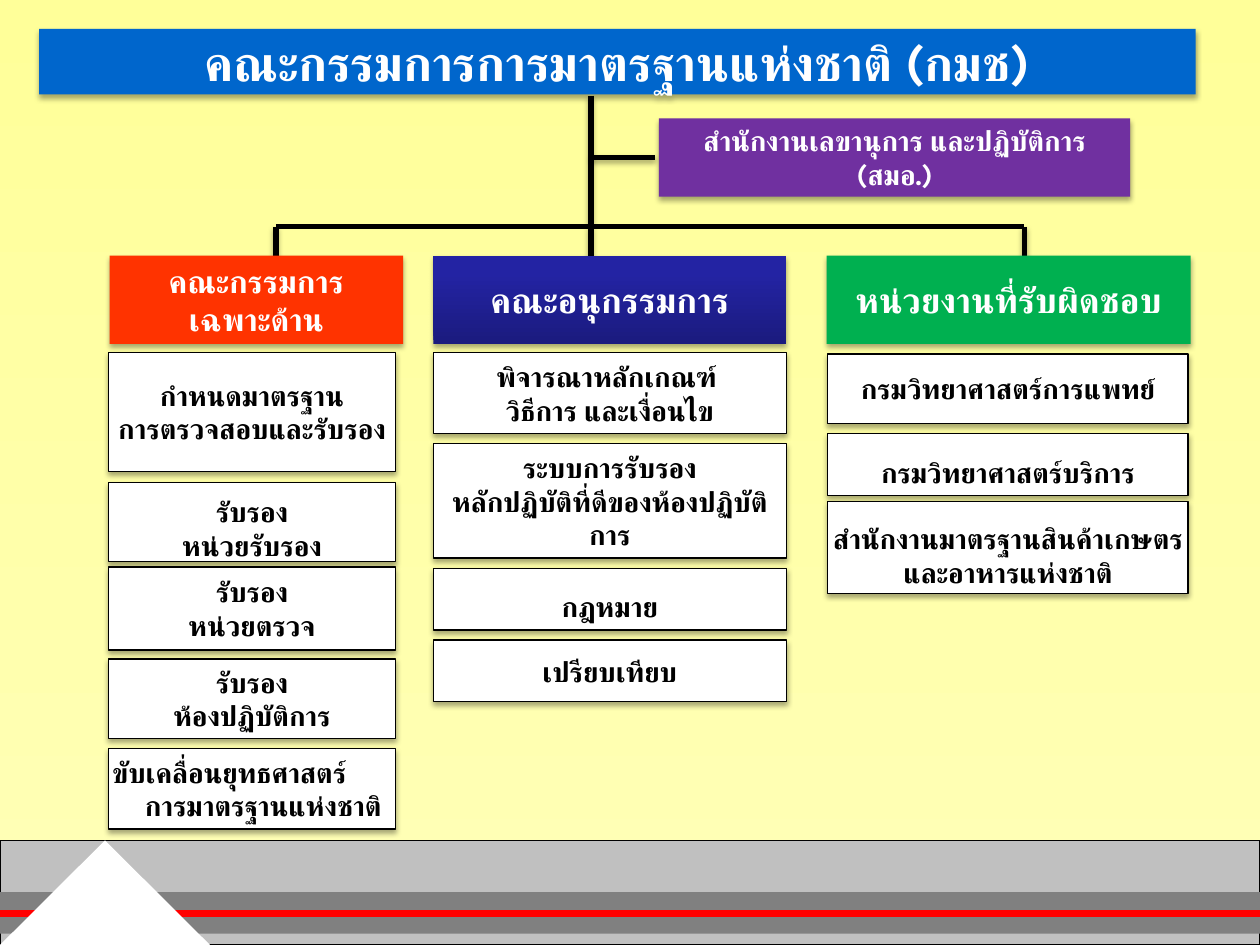
from lxml import etree
from pptx import Presentation
from pptx.dml.color import RGBColor
from pptx.enum.shapes import MSO_CONNECTOR, MSO_SHAPE
from pptx.enum.text import MSO_ANCHOR, PP_ALIGN
from pptx.oxml.ns import qn
from pptx.util import Inches, Pt

RECTANGLE, TRIANGLE = MSO_SHAPE.RECTANGLE, MSO_SHAPE.ISOSCELES_TRIANGLE
STRAIGHT = MSO_CONNECTOR.STRAIGHT
MIDDLE = MSO_ANCHOR.MIDDLE
CENTER, LEFT = PP_ALIGN.CENTER, PP_ALIGN.LEFT
BODY_FONT, HEADING_FONT = "Karla", "Roboto"
BLACK, WHITE = "000000", "FFFFFF"
WIDTH, HEIGHT = 10, 7.5
BAND_TOP = 6.67
HEAD_TOP, HEAD_HEIGHT = 2.03, 0.7
BRANCH_Y, TRUNK_X = 1.8, 4.69

# Content
TITLE = ["คณะกรรมการการมาตรฐานแห่งชาติ (กมช)"]
SECRETARIAT = ["สำนักงานเลขานุการ และปฏิบัติการ", "(สมอ.)"]

# Items: text, top, height, downward shift of the text
COLUMNS = [
    {"head": ["คณะกรรมการ", "เฉพาะด้าน"], "size": 18, "fill": "FF3300",
     "left": 0.87, "width": 2.33, "item_left": 0.86, "item_width": 2.28,
     "branch_x": 2.19,
     "items": [
         (["กำหนดมาตรฐาน\nการตรวจสอบและรับรอง"], 2.8, 0.94, 0),
         (["รับรอง", "หน่วยรับรอง"], 3.83, 0.63, 0.05),
         (["รับรอง", "หน่วยตรวจ"], 4.5, 0.66, 0),
         (["รับรอง\nห้องปฏิบัติการ"], 5.23, 0.63, 0),
         (["ขับเคลื่อนยุทธศาสตร์\nการมาตรฐานแห่งชาติ"], 5.94, 0.64, 0)]},
    {"head": ["คณะอนุกรรมการ"], "size": 20, "fill": ("1B1B7E", "2323A3"),
     "left": 3.44, "width": 2.8, "item_left": 3.44, "item_width": 2.8,
     "branch_x": TRUNK_X,
     "items": [
         (["พิจารณาหลักเกณฑ์ \nวิธีการ และเงื่อนไข"], 2.8, 0.64, 0),
         (["ระบบการรับรอง\nหลักปฏิบัติที่ดีของห้องปฏิบัติการ"], 3.52, 0.91, 0),
         (["กฎหมาย"], 4.51, 0.49, 0.06),
         (["เปรียบเทียบ"], 5.08, 0.49, 0)]},
    {"head": ["หน่วยงานที่รับผิดชอบ"], "size": 20, "fill": "00B050",
     "left": 6.56, "width": 2.89, "item_left": 6.57, "item_width": 2.86,
     "branch_x": 8.13,
     "items": [
         (["กรมวิทยาศาสตร์การแพทย์"], 2.81, 0.55, 0),
         (["กรมวิทยาศาสตร์บริการ"], 3.44, 0.49, 0.06),
         (["สำนักงานมาตรฐานสินค้าเกษตรและอาหารแห่งชาติ"], 3.98, 0.73, 0.06)]},
]


def color(value):
    return RGBColor.from_string(value)


def set_gradient(fill, colors, angle, end=1.0):
    fill.gradient()
    fill.gradient_angle = angle
    for stop, value, position in zip(fill.gradient_stops, colors, (0.0, end)):
        stop.color.rgb = color(value)
        stop.position = position


def set_shadow(part, visible):
    effects = etree.SubElement(part._element.spPr, qn("a:effectLst"))
    if visible:
        shadow = etree.SubElement(
            effects, qn("a:outerShdw"), blurRad=str(Pt(3.1)), dist=str(Pt(1.8)),
            dir="5400000", rotWithShape="0")
        tone = etree.SubElement(shadow, qn("a:srgbClr"), val=BLACK)
        etree.SubElement(tone, qn("a:alpha"), val="35000")


def add_box(left, top, width, height, fill, outline=None, shadow=True, kind=RECTANGLE):
    box = slide.shapes.add_shape(
        kind, Inches(left), Inches(top), Inches(width), Inches(height))
    if isinstance(fill, tuple):
        set_gradient(box.fill, fill, 90, 0.8)
    else:
        box.fill.solid()
        box.fill.fore_color.rgb = color(fill)
    if outline:
        box.line.color.rgb = color(outline)
        box.line.width = Pt(0.75)
    else:
        box.line.fill.background()
    set_shadow(box, shadow)
    return box


def add_line(x1, y1, x2, y2, tone=BLACK, weight=3, shadow=True):
    line = slide.shapes.add_connector(
        STRAIGHT, Inches(x1), Inches(y1), Inches(x2), Inches(y2))
    line.line.color.rgb = color(tone)
    line.line.width = Pt(weight)
    set_shadow(line, shadow)


def write(box, paragraphs, size, tone, font=BODY_FONT, side=0, shift=0):
    frame = box.text_frame
    frame.word_wrap = True
    frame.vertical_anchor = MIDDLE
    frame.margin_left = frame.margin_right = Inches(side)
    frame.margin_top = Inches(0.05 + 2 * shift)
    frame.margin_bottom = Inches(0.05)
    for number, text in enumerate(paragraphs):
        para = frame.paragraphs[0] if number == 0 else frame.add_paragraph()
        para.alignment = CENTER
        for row, words in enumerate(text.split("\n")):
            if row:
                para.add_line_break()
            span = para.add_run()
            span.text = words
            span.font.size = Pt(size)
            span.font.bold = True
            span.font.name = font
            span.font.color.rgb = color(tone)
            etree.SubElement(span.font._element, qn("a:cs"), typeface=font)


deck = Presentation()
deck.slide_width, deck.slide_height = Inches(WIDTH), Inches(HEIGHT)
slide = deck.slides.add_slide(deck.slide_layouts[6])
set_gradient(slide.background.fill, ("FFFF99", "FFFFB7"), 270)

# Footer band
band_height = HEIGHT - BAND_TOP
add_box(0, BAND_TOP, WIDTH, band_height, "C0C0C0", BLACK, shadow=False)
add_box(0, 7.08, WIDTH, 0.33, "808080", shadow=False)
add_line(0, 7.25, WIDTH, 7.25, "FF0000", 4.5, shadow=False)
add_box(0, BAND_TOP, WIDTH / 6, band_height, WHITE, shadow=False, kind=TRIANGLE)

# Tree lines
for column in COLUMNS:
    add_line(column["branch_x"], BRANCH_Y, column["branch_x"], 2.19)
add_line(TRUNK_X, 0.76, TRUNK_X, 1.78)
add_line(TRUNK_X, 1.25, 5.2, 1.25)
add_line(COLUMNS[0]["branch_x"], BRANCH_Y, COLUMNS[-1]["branch_x"], BRANCH_Y,
         shadow=False)

# Top boxes
write(add_box(0.31, 0.23, 9.18, 0.52, "0066CC"), TITLE, 28, WHITE, side=0.1)
write(add_box(5.23, 0.94, 3.74, 0.62, "7030A0"), SECRETARIAT, 16, WHITE, side=0.1)

# Columns
for column in COLUMNS:
    for paragraphs, top, height, shift in column["items"]:
        box = add_box(column["item_left"], top, column["item_width"], height,
                      WHITE, BLACK)
        write(box, paragraphs, 16, BLACK, shift=shift)
    head = add_box(column["left"], HEAD_TOP, column["width"], HEAD_HEIGHT,
                   column["fill"])
    write(head, column["head"], column["size"], WHITE, HEADING_FONT)
    if column is COLUMNS[0]:
        # The last item steps its second row to the right
        para = box.text_frame.paragraphs[0]
        para.alignment = LEFT
        properties = para._p.get_or_add_pPr()
        properties.set("marL", str(Inches(0.29)))
        properties.set("indent", str(Inches(-0.26)))

deck.save("out.pptx")
